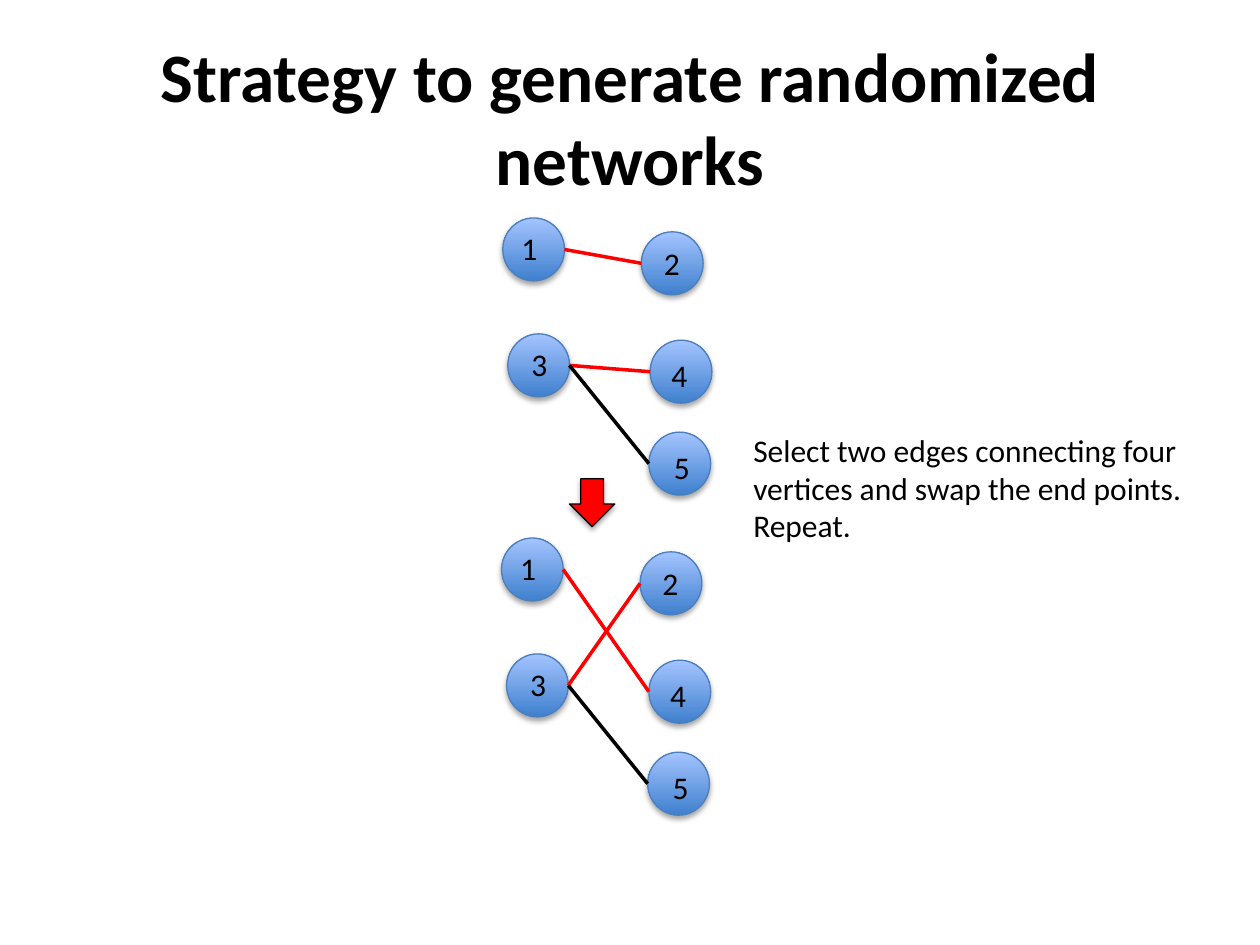
from lxml import etree
from pptx import Presentation
from pptx.dml.color import RGBColor
from pptx.enum.shapes import MSO_CONNECTOR, MSO_SHAPE
from pptx.enum.text import MSO_ANCHOR, MSO_AUTO_SIZE, PP_ALIGN
from pptx.oxml.ns import qn
from pptx.util import Inches, Pt

OVAL, ARROW = MSO_SHAPE.OVAL, MSO_SHAPE.DOWN_ARROW
LINE = MSO_CONNECTOR.STRAIGHT
MIDDLE, CENTER = MSO_ANCHOR.MIDDLE, PP_ALIGN.CENTER
GROW, FIXED = MSO_AUTO_SIZE.SHAPE_TO_FIT_TEXT, MSO_AUTO_SIZE.NONE
BLACK = RGBColor(0x00, 0x00, 0x00)
RED = RGBColor(0xFF, 0x00, 0x00)
DEEP = RGBColor(0x3F, 0x80, 0xCE)
PALE = RGBColor(0xA4, 0xC4, 0xFF)
EDGE = RGBColor(0x4B, 0x7E, 0xBC)

NODE_W, NODE_H = 0.49, 0.5
# vertex: left, top, then the label's shift from that corner
NODES = {
    "1": (3.99, 1.73, 0.05, 0.04),
    "3": (4.03, 2.65, 0.09, 0.04),
    "5": (5.15, 3.43, 0.10, 0.08),
    "4": (5.16, 2.70, 0.07, 0.08),
    "2": (5.09, 1.84, 0.08, 0.05),
}
BEFORE = [("1", "2", RED), ("3", "4", RED), ("3", "5", BLACK)]
AFTER = [("1", "4", RED), ("3", "2", RED), ("3", "5", BLACK)]


class Deck:
    def __init__(self, font="Calibri", size=18):
        self.font, self.size = font, size
        self.prs = Presentation()
        self.prs.slide_width, self.prs.slide_height = Inches(10), Inches(7.5)
        self.slide = self.prs.slides.add_slide(self.prs.slide_layouts[5])
        self.shapes = self.slide.shapes

    def style(self, para, size, bold=False):
        para.font.name, para.font.size = self.font, Pt(size)
        para.font.bold, para.font.color.rgb = bold, BLACK

    def title(self, text, x, y, w, h):
        box = self.shapes.title
        box.left, box.top, box.width, box.height = map(Inches, (x, y, w, h))
        frame = box.text_frame
        frame.text, frame.word_wrap = text, True
        frame.auto_size, frame.vertical_anchor = FIXED, MIDDLE
        para = frame.paragraphs[0]
        para.alignment = CENTER
        self.style(para, 39.6, True)

    def text(self, text, x, y, w, h, wrap=True):
        frame = self.shapes.add_textbox(*map(Inches, (x, y, w, h))).text_frame
        frame.text, frame.word_wrap, frame.auto_size = text, wrap, GROW
        for para in frame.paragraphs:
            self.style(para, self.size)

    def shape(self, kind, x, y, w, h, line):
        """Add an outlined shape with a soft shadow below it."""
        item = self.shapes.add_shape(kind, *map(Inches, (x, y, w, h)))
        item.line.color.rgb, item.line.width = line, Pt(0.75)
        item.shadow.inherit = False
        effects = item._element.spPr.find(qn("a:effectLst"))
        shade = etree.SubElement(effects, qn("a:outerShdw"), blurRad=str(Pt(3.1)),
                                 dist=str(Pt(1.8)), dir="5400000", rotWithShape="0")
        color = etree.SubElement(shade, qn("a:srgbClr"), val=str(BLACK))
        etree.SubElement(color, qn("a:alpha"), val="35000")
        return item

    def node(self, x, y):
        fill = self.shape(OVAL, x, y, NODE_W, NODE_H, EDGE).fill
        fill.gradient()
        fill.gradient_angle = 90
        for stop, color in zip(fill.gradient_stops, (DEEP, PALE)):
            stop.color.rgb = color

    def arrow(self, x, y, w, h):
        fill = self.shape(ARROW, x, y, w, h, BLACK).fill
        fill.solid()
        fill.fore_color.rgb = RED

    def link(self, x1, y1, x2, y2, color):
        line = self.shapes.add_connector(LINE, *map(Inches, (x1, y1, x2, y2)))
        line.line.color.rgb, line.line.width = color, Pt(2)
        etree.SubElement(line._element.spPr, qn("a:effectLst"))

    def graph(self, edges, dx=0, dy=0):
        """Draw the vertices, the edges from right side to left side, the labels."""
        spots = {name: (x + dx, y + dy) for name, (x, y, *_) in NODES.items()}
        for x, y in spots.values():
            self.node(x, y)
        for start, end, color in edges:
            (x1, y1), (x2, y2) = spots[start], spots[end]
            self.link(x1 + NODE_W, y1 + NODE_H / 2, x2, y2 + NODE_H / 2, color)
        for name, (x, y) in spots.items():
            right, down = NODES[name][2:]
            self.text(name, x + right, y + down, 0.33, 0.4, wrap=False)


def main():
    deck = Deck()
    deck.title("Strategy to generate randomized networks", 0.5, 0.3, 9, 1.25)
    deck.graph(BEFORE)
    deck.graph(AFTER, -0.01, 2.54)
    deck.arrow(4.52, 3.8, 0.36, 0.38)
    deck.text("Select two edges connecting four vertices and swap the end points.\n"
              "Repeat.", 5.88, 3.37, 3.62, 1.01)
    deck.prs.save("out.pptx")


if __name__ == "__main__":
    main()
